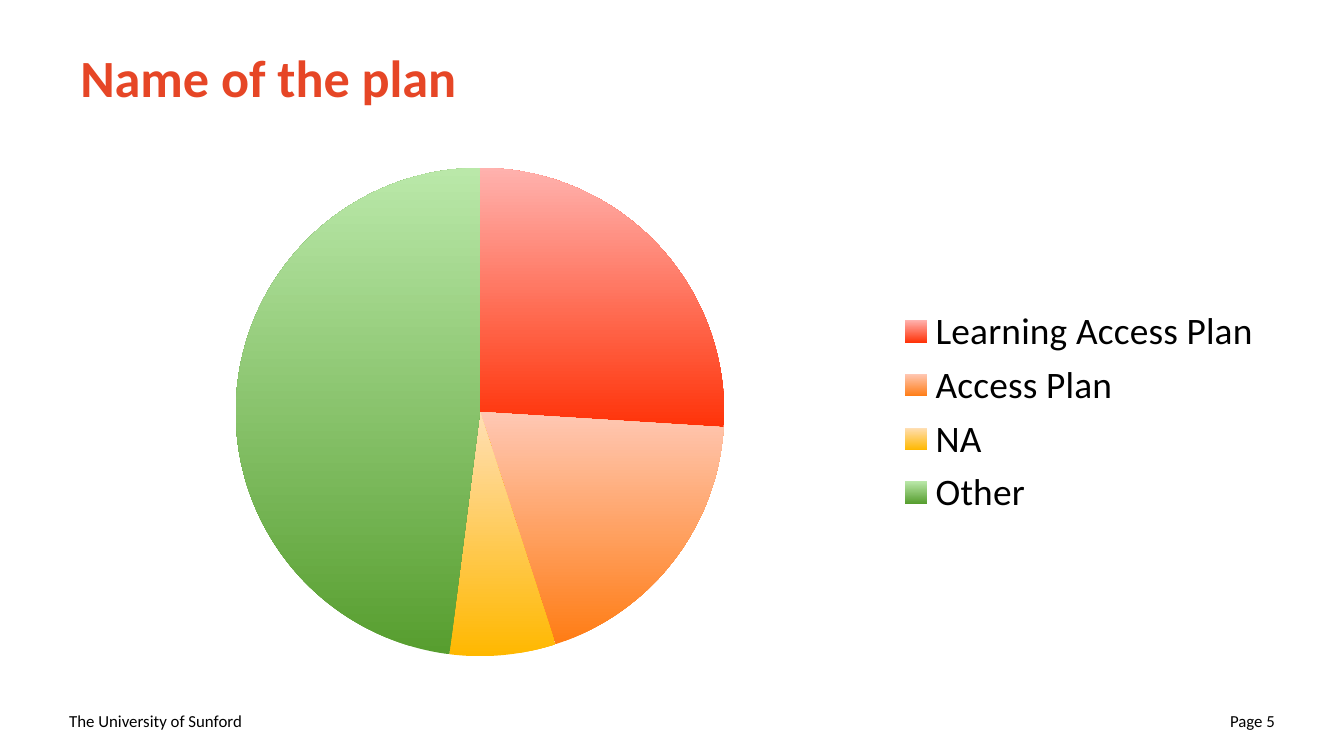
from pptx import Presentation
from pptx.chart.data import CategoryChartData
from pptx.dml.color import RGBColor
from pptx.enum.chart import XL_CHART_TYPE, XL_LEGEND_POSITION
from pptx.enum.text import MSO_ANCHOR, PP_ALIGN
from pptx.util import Pt

BLACK = RGBColor(0x00, 0x00, 0x00)
TITLE_RED = RGBColor(0xE6, 0x46, 0x26)
RED, PALE_RED = RGBColor(0xFF, 0x33, 0x09), RGBColor(0xFF, 0xB2, 0xAE)
ORANGE, PALE_ORANGE = RGBColor(0xFF, 0x7C, 0x14), RGBColor(0xFF, 0xC8, 0xB4)
YELLOW, PALE_YELLOW = RGBColor(0xFF, 0xB8, 0x00), RGBColor(0xFF, 0xDF, 0xB5)
GREEN, PALE_GREEN = RGBColor(0x57, 0x9E, 0x2F), RGBColor(0xBA, 0xE8, 0xA9)
FONT = "Calibri"


def set_format(font, values):
    for name, value in values.items():
        if name == "color":
            font.color.rgb = value
        else:
            setattr(font, name, value)


presentation = Presentation()
presentation.slide_width = Pt(720)
presentation.slide_height = Pt(405)
slide = presentation.slides.add_slide(presentation.slide_layouts[6])

title_format = {"name": FONT, "size": Pt(28), "bold": True, "color": TITLE_RED}
footer_format = {"name": FONT, "size": Pt(9), "color": BLACK}
chart_format = {"name": FONT, "size": Pt(20), "color": BLACK}

texts = [
    ("The University of Sunford", 30, 375, 168, 22, PP_ALIGN.LEFT, footer_format),
    ("Page 5", 522, 375, 168, 22, PP_ALIGN.RIGHT, footer_format),
    ("Name of the plan", 36, 7, 648, 68, PP_ALIGN.LEFT, title_format),
]
for text, left, top, width, height, alignment, values in texts:
    shape = slide.shapes.add_textbox(Pt(left), Pt(top), Pt(width), Pt(height))
    shape.text_frame.word_wrap = True
    shape.text_frame.vertical_anchor = MSO_ANCHOR.MIDDLE
    paragraph = shape.text_frame.paragraphs[0]
    paragraph.alignment = alignment
    run = paragraph.add_run()
    run.text = text
    set_format(run.font, values)

plans = [
    ("Learning Access Plan", 26, RED, PALE_RED),
    ("Access Plan", 19, ORANGE, PALE_ORANGE),
    ("NA", 7, YELLOW, PALE_YELLOW),
    ("Other", 48, GREEN, PALE_GREEN),
]
chart_data = CategoryChartData()
chart_data.categories = [plan[0] for plan in plans]
chart_data.add_series("Series 1", [plan[1] for plan in plans])
chart = slide.shapes.add_chart(
    XL_CHART_TYPE.PIE, Pt(36), Pt(80), Pt(648), Pt(281.5), chart_data
).chart
set_format(chart.font, chart_format)
chart.has_title = False
chart.has_legend = True
chart.legend.position = XL_LEGEND_POSITION.RIGHT
chart.legend.include_in_layout = False
chart.plots[0].vary_by_categories = True

for index, (name, value, bottom_color, top_color) in enumerate(plans):
    point_format = chart.plots[0].series[0].points[index].format
    point_format.line.fill.background()
    fill = point_format.fill
    fill.gradient()
    fill.gradient_angle = 90
    for stop, color in zip(fill.gradient_stops, (bottom_color, top_color)):
        stop.color.rgb = color

presentation.save("out.pptx")
